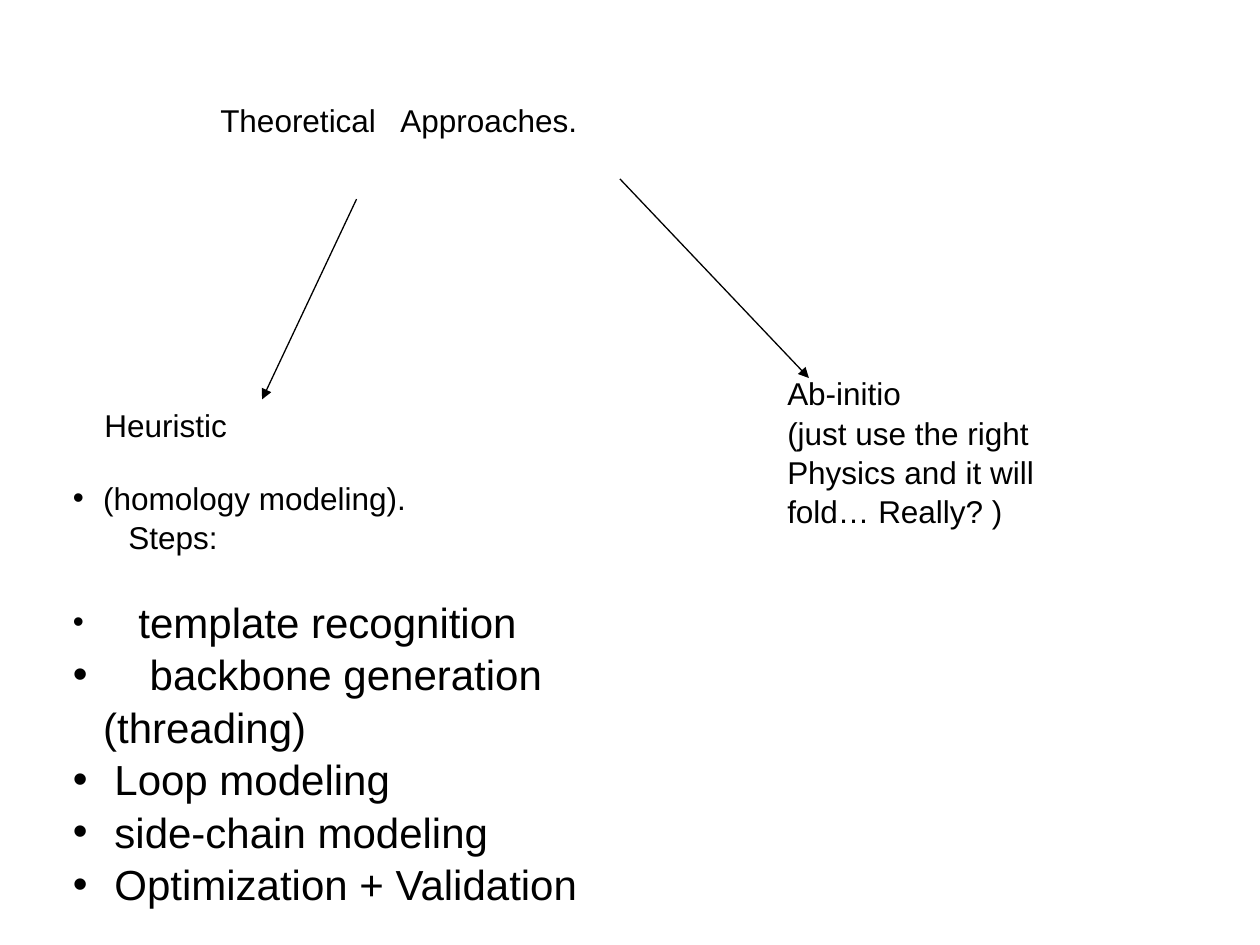
"""Build a slide that contrasts two theoretical approaches to protein folding."""
from lxml.etree import SubElement
from pptx import Presentation
from pptx.dml.color import RGBColor
from pptx.enum.shapes import MSO_CONNECTOR as Connector
from pptx.oxml.ns import qn
from pptx.util import Inches, Pt

BLACK = RGBColor(0, 0, 0)
FONT = "Arial"
LINE_SPACING = 1.04
BODY, STEP = 18, 24
HANG = 0.24

LABELS = [
    ((1.65, 0.74, 4.31, 0.57), ["Theoretical   Approaches."]),
    ((0.73, 3.16, 1.62, 0.57), ["Heuristic"]),
    ((6.15, 2.91, 3.16, 1.97),
     ["Ab-initio", "(just use the right \nPhysics and it will \nfold… Really? )"]),
]
ARROWS = [((2.83, 1.58), (2.08, 3.17)), ((4.92, 1.42), (6.42, 3))]
STEPS_AREA = (0.48, 3.74, 4.98, 3.57)
STEPS = [
    {"text": "(homology modeling).", "size": BODY},
    {"text": "Steps:", "size": BODY, "margin": 0.44, "bullet": None, "after": 22},
    {"text": "template recognition", "margin": 0.52, "bullet": 75},
    {"text": "backbone generation", "margin": 0.61},
    {"text": "(threading)", "bullet": None},
    {"text": "Loop modeling", "margin": 0.33},
    {"text": "side-chain modeling", "margin": 0.33},
    {"text": "Optimization + Validation", "margin": 0.33},
]


def add_box(page, area):
    frame = page.shapes.add_textbox(*map(Inches, area)).text_frame
    frame.word_wrap = True
    return frame


def add_para(frame, index, text, size):
    para = frame.add_paragraph() if index else frame.paragraphs[0]
    para.text = text
    para.line_spacing = LINE_SPACING
    for span in para.runs:
        for name, value in {"name": FONT, "size": Pt(size)}.items():
            setattr(span.font, name, value)
        span.font.color.rgb = BLACK
    return para


def add_step(frame, index, text, size=STEP, margin=HANG, bullet=100, after=0):
    para = add_para(frame, index, text, size)
    para.space_after = Pt(after)
    props = para._p.get_or_add_pPr()
    props.set("marL", str(Inches(margin)))
    props.set("indent", str(-Inches(margin) if bullet else 0))
    if bullet:
        SubElement(props, qn("a:buSzPct"), val=str(bullet * 1000))
        SubElement(props, qn("a:buFont"), typeface=FONT)
        SubElement(props, qn("a:buChar"), char="•")


def add_arrow(page, start, end):
    arrow = page.shapes.add_connector(Connector.STRAIGHT, *map(Inches, start + end))
    arrow.line.color.rgb = BLACK
    arrow.line.width = Pt(0.75)
    SubElement(arrow.line._get_or_add_ln(), qn("a:tailEnd"), type="triangle")
    SubElement(arrow._element.spPr, qn("a:effectLst"))


def main():
    deck = Presentation()
    deck.slide_width, deck.slide_height = Inches(10), Inches(7.5)
    page = deck.slides.add_slide(deck.slide_layouts[6])
    for start, end in ARROWS:
        add_arrow(page, start, end)
    for area, texts in LABELS:
        frame = add_box(page, area)
        for index, text in enumerate(texts):
            add_para(frame, index, text, BODY)
    frame = add_box(page, STEPS_AREA)
    for index, step in enumerate(STEPS):
        add_step(frame, index, **step)
    deck.save("out.pptx")


if __name__ == "__main__":
    main()
